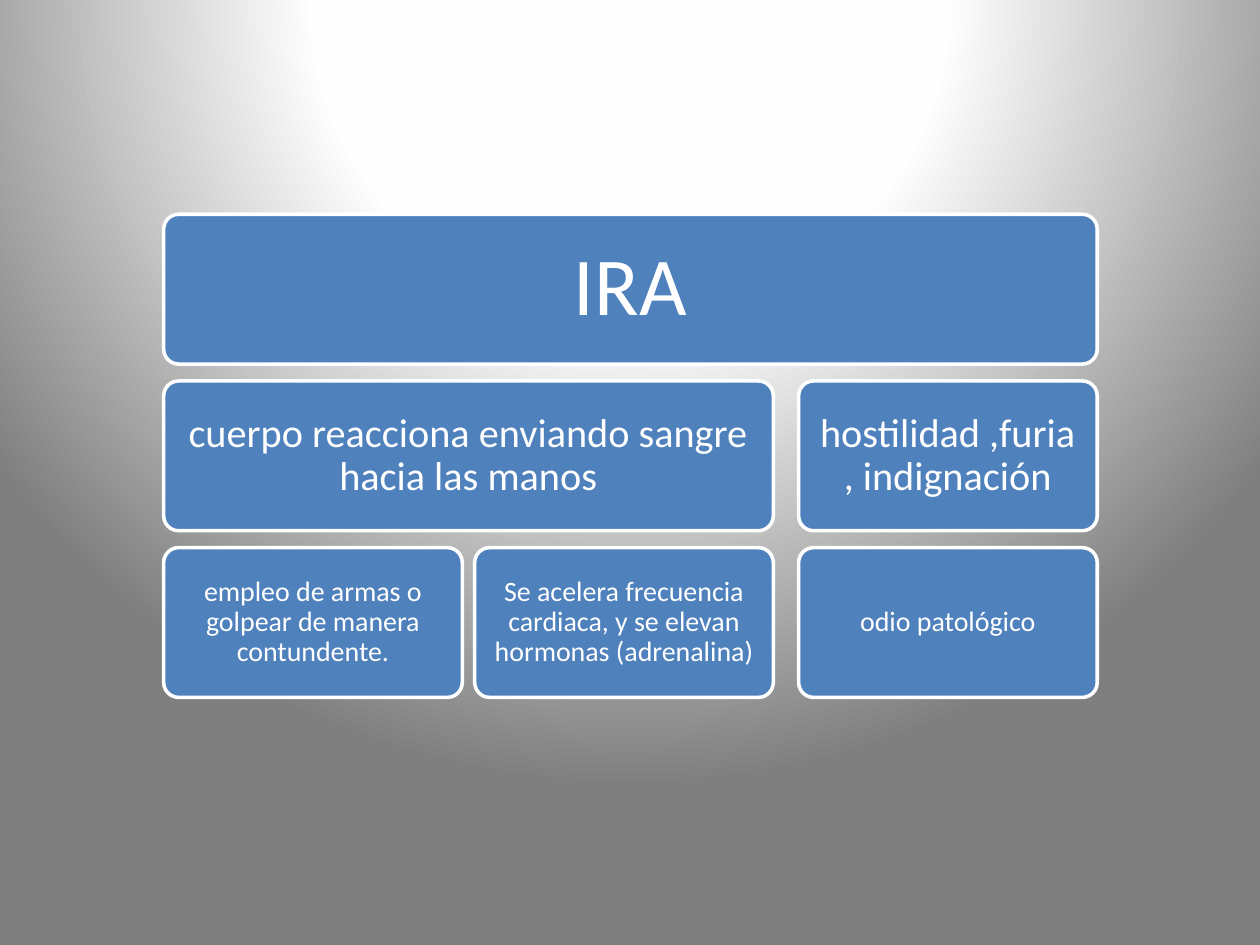
import pptx
import pptx.dml.color
import pptx.enum.shapes
import pptx.enum.text
import pptx.oxml
import pptx.oxml.ns
import pptx.util
from pptx.util import Cm

WIDE, HIGH = 6.02, 3.02
LEFTS = (0, 6.27, 12.8)
PITCH = 3.36

# Each row: text size, inset, then (first column, last column, text)
ROWS = (
    (47, 0.5, ((0, 2, "IRA"),)),
    (23, 0.25, ((0, 1, "cuerpo reacciona enviando sangre hacia las manos"),
                (2, 2, "hostilidad ,furia, indignación"))),
    (16, 0.18, ((0, 0, "empleo de armas o golpear de manera contundente."),
                (1, 1, "Se acelera frecuencia cardiaca, y se elevan hormonas (adrenalina)"),
                (2, 2, "odio patológico"))),
)
STOPS = ((0, "FFFFFF"), (40, "FEFEFE"), (100, "7F7F7F"))


def color(code):
    return pptx.dml.color.RGBColor.from_string(code)


def style(item, values):
    for name, value in values.items():
        setattr(item, name, value)


def glow(slide):
    """Fill the background with a circular gradient centred above the slide."""
    slide.background.fill.solid()
    solid = slide.element.find(".//" + pptx.oxml.ns.qn("p:bgPr"))[0]
    stops = "".join(
        f'<a:gs pos="{place * 1000}"><a:srgbClr val="{code}"/></a:gs>'
        for place, code in STOPS)
    grad = pptx.oxml.parse_xml(
        f'<a:gradFill {pptx.oxml.ns.nsdecls("a")} rotWithShape="1">'
        f'<a:gsLst>{stops}</a:gsLst><a:path path="circle">'
        '<a:fillToRect l="50000" t="-80000" r="50000" b="180000"/>'
        '</a:path></a:gradFill>')
    solid.getparent().replace(solid, grad)


def card(slide, box, text, size, inset):
    shape = slide.shapes.add_shape(
        pptx.enum.shapes.MSO_SHAPE.ROUNDED_RECTANGLE, *map(Cm, box))
    shape.adjustments[0] = 0.1
    shape.shadow.inherit = False
    shape.fill.solid()
    shape.fill.fore_color.rgb = color("4F81BD")
    shape.line.color.rgb = color("FFFFFF")
    shape.line.width = pptx.util.Pt(2)
    frame = shape.text_frame
    style(frame, {
        "text": text, "word_wrap": True,
        "vertical_anchor": pptx.enum.text.MSO_ANCHOR.MIDDLE,
        **{f"margin_{side}": Cm(inset)
           for side in ("left", "top", "right", "bottom")}})
    para = frame.paragraphs[0]
    style(para, {"alignment": pptx.enum.text.PP_ALIGN.CENTER,
                 "line_spacing": 0.9})
    style(para.runs[0].font, {"name": "Calibri", "size": pptx.util.Pt(size)})
    para.runs[0].font.color.rgb = color("FFFFFF")


def chart(slide, left, top):
    """Stack the rows of cards from the given corner."""
    for row, (size, inset, cards) in enumerate(ROWS):
        for first, last, text in cards:
            width = LEFTS[last] + WIDE - LEFTS[first]
            box = (left + LEFTS[first], top + row * PITCH, width, HIGH)
            card(slide, box, text, size, inset)


def main():
    deck = pptx.Presentation()
    style(deck, {"slide_width": Cm(25.4), "slide_height": Cm(19.05)})
    slide = deck.slides.add_slide(deck.slide_layouts.get_by_name("Blank"))
    glow(slide)
    chart(slide, 3.3, 4.32)
    deck.save("out.pptx")


if __name__ == "__main__":
    main()
